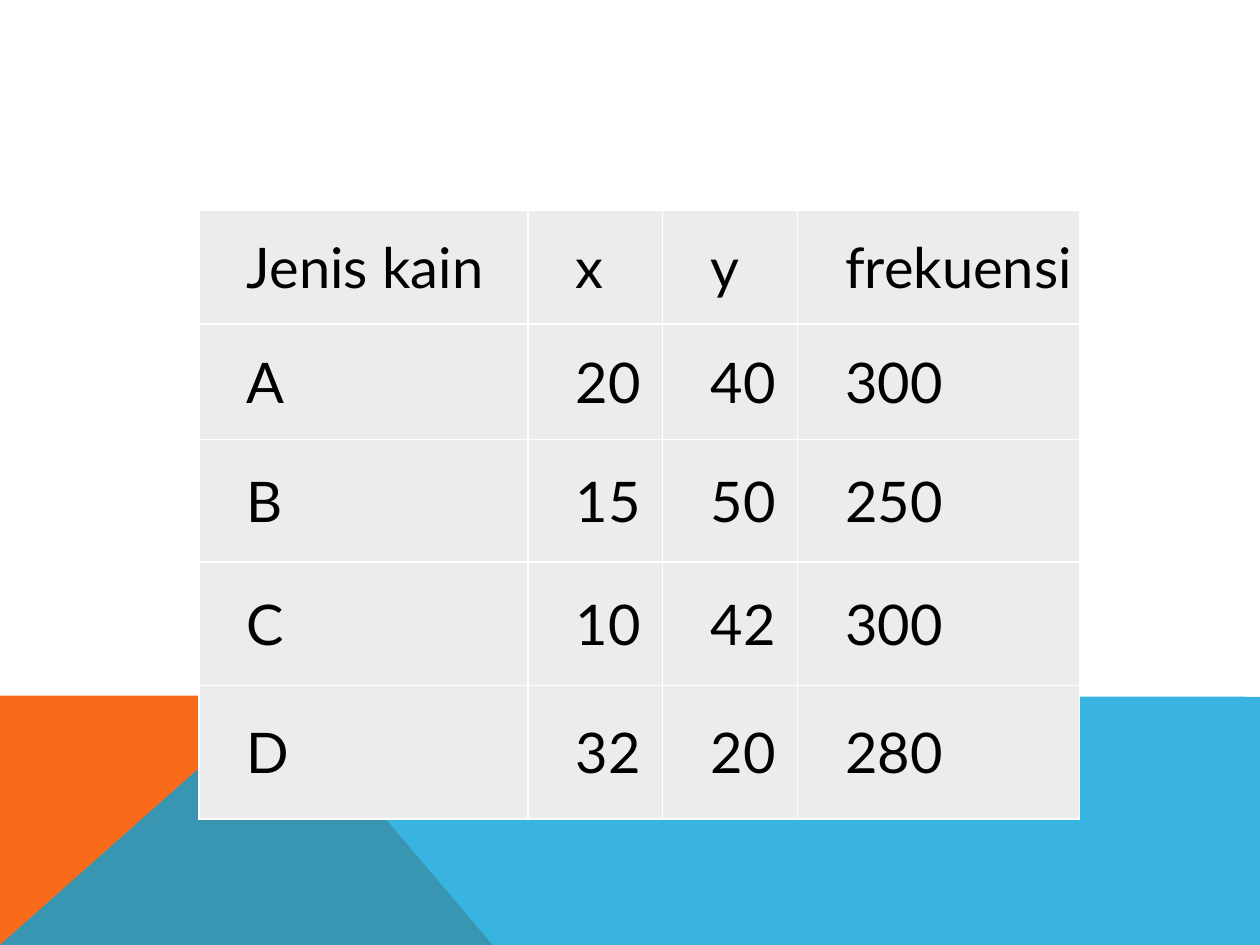
from dataclasses import dataclass

from lxml.etree import SubElement
from pptx import Presentation
from pptx.dml.color import RGBColor
from pptx.enum.text import MSO_ANCHOR, PP_ALIGN
from pptx.oxml.ns import qn
from pptx.util import Inches, Pt


@dataclass
class Band:
    points: list[tuple[float, float]]
    color: str
    alpha: int = 100


BANDS = [
    Band([(0, 7.5), (0, 5.52), (2.23, 5.52), (3.91, 7.5)], "F96A1B"),
    Band([(0, 7.5), (2.23, 5.52), (10, 5.53), (10, 7.5)], "08A1D9", 80),
]
ROWS = [
    ("Jenis kain", "x", "y", "frekuensi"),
    ("A", "20", "40", "300"),
    ("B", "15", "50", "250"),
    ("C", "10", "42", "300"),
    ("D", "32", "20", "280"),
]
WIDTHS = [2.61, 1.07, 1.07, 2.24]
HEIGHTS = [0.9, 0.92, 0.97, 0.98, 1.06]
CELL = {
    "vertical_anchor": MSO_ANCHOR.MIDDLE,
    "margin_left": 0,
    "margin_right": 0,
    "margin_top": 0,
    "margin_bottom": 0,
}
FONT = {"name": "Lato", "size": Pt(32), "bold": False}


def rgb(code: str) -> RGBColor:
    return RGBColor.from_string(code)


def apply(item, values: dict) -> None:
    for key, value in values.items():
        setattr(item, key, value)


def paint(fill, code: str) -> None:
    fill.solid()
    fill.fore_color.rgb = rgb(code)


def draw_band(slide, band: Band) -> None:
    start, *rest = [(Inches(x), Inches(y)) for x, y in band.points]
    pen = slide.shapes.build_freeform(*start)
    pen.add_line_segments(rest, close=True)
    shape = pen.convert_to_shape()
    shape.shadow.inherit = False
    shape.line.fill.background()
    paint(shape.fill, band.color)
    if band.alpha < 100:
        tone = next(shape._element.spPr.iter(qn("a:srgbClr")))
        SubElement(tone, qn("a:alpha"), val=str(band.alpha * 1000))


def draw_edges(cell, code: str, width: float) -> None:
    props = cell._tc.get_or_add_tcPr()
    for side in ("lnL", "lnR", "lnT", "lnB"):
        line = SubElement(props, qn(f"a:{side}"), w=str(Pt(width)))
        fill = SubElement(line, qn("a:solidFill"))
        SubElement(fill, qn("a:srgbClr"), val=code)


def fill_cell(cell, text: str) -> None:
    apply(cell, CELL)
    draw_edges(cell, "FFFFFF", 1)
    paint(cell.fill, "ECECEC")
    cell.text = text
    para = cell.text_frame.paragraphs[0]
    para.alignment = PP_ALIGN.JUSTIFY
    props = para._p.get_or_add_pPr()
    props.set("marL", str(Inches(0.38)))
    props.set("indent", "0")
    font = para.runs[0].font
    apply(font, FONT)
    font.color.rgb = rgb("000000")


def draw_table(slide) -> None:
    frame = slide.shapes.add_table(
        len(ROWS), len(WIDTHS), Inches(1.58), Inches(1.67),
        Inches(sum(WIDTHS)), Inches(sum(HEIGHTS)))
    table = frame.table
    apply(table, {"first_row": False, "horz_banding": False})
    for col, width in zip(table.columns, WIDTHS):
        col.width = Inches(width)
    for row, height, texts in zip(table.rows, HEIGHTS, ROWS):
        row.height = Inches(height)
        for cell, text in zip(row.cells, texts):
            fill_cell(cell, text)


def main() -> None:
    deck = Presentation()
    deck.slide_width, deck.slide_height = Inches(10), Inches(7.5)
    slide = deck.slides.add_slide(deck.slide_layouts[6])
    paint(slide.background.fill, "FFFFFF")

    # Coloured bands at the foot
    for band in BANDS:
        draw_band(slide, band)

    # Fabric table
    draw_table(slide)
    deck.save("out.pptx")


if __name__ == "__main__":
    main()
